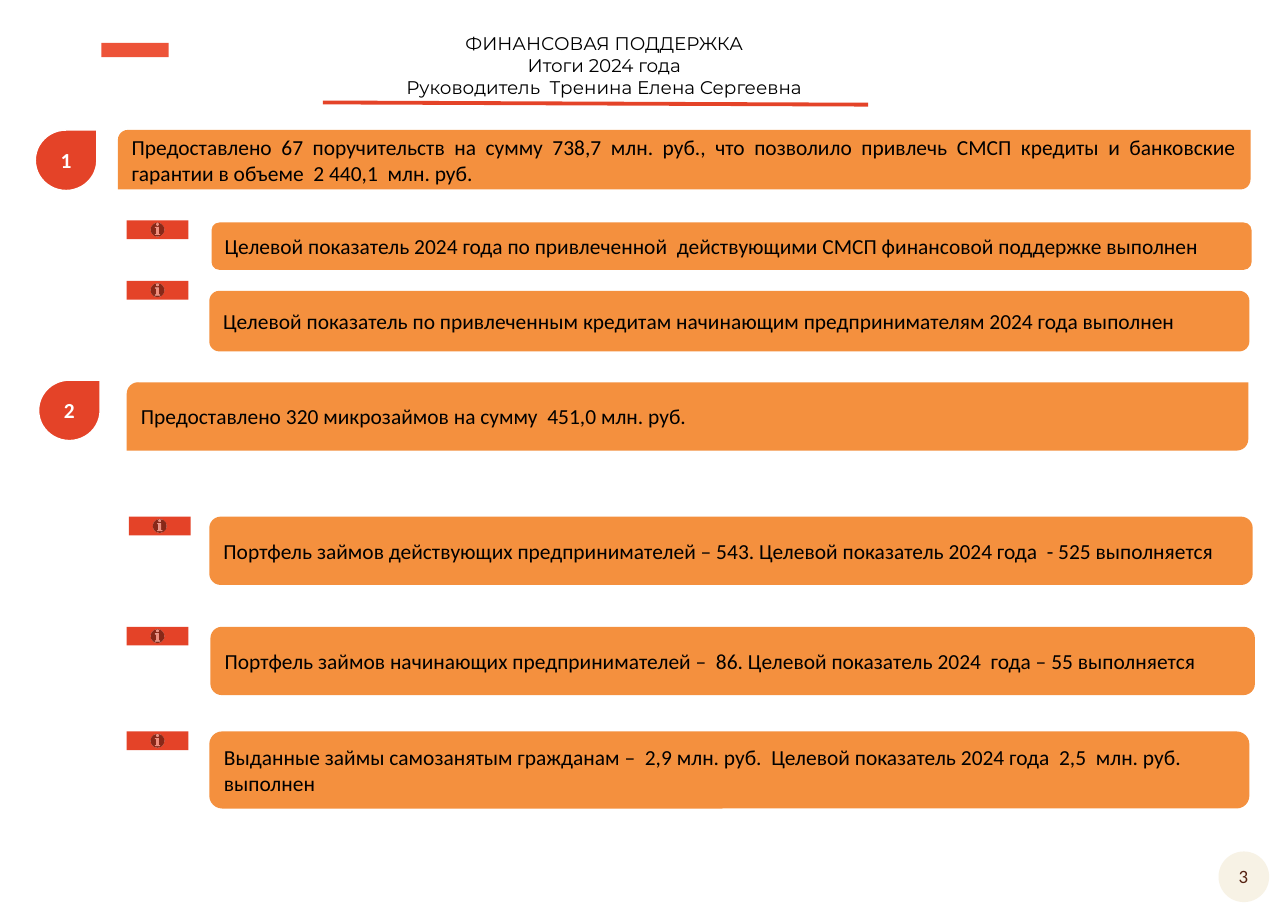
from lxml import etree
from pptx import Presentation
from pptx.dml.color import RGBColor
from pptx.enum.shapes import MSO_CONNECTOR, MSO_SHAPE
from pptx.enum.text import MSO_ANCHOR, PP_ALIGN
from pptx.oxml.ns import qn
from pptx.util import Inches, Pt

LEFT, CENTER, JUSTIFY = PP_ALIGN.LEFT, PP_ALIGN.CENTER, PP_ALIGN.JUSTIFY
MIDDLE = MSO_ANCHOR.MIDDLE
STRAIGHT = MSO_CONNECTOR.STRAIGHT
RECT, OVAL, DROP = MSO_SHAPE.RECTANGLE, MSO_SHAPE.OVAL, MSO_SHAPE.TEAR
ROUNDED, DIAGONAL = MSO_SHAPE.ROUNDED_RECTANGLE, MSO_SHAPE.ROUND_2_DIAG_RECTANGLE
INFO = MSO_SHAPE.ACTION_BUTTON_INFORMATION

ORANGE = RGBColor(0xF4, 0x90, 0x3E)
RED = RGBColor(0xE4, 0x43, 0x28)
CORAL = RGBColor(0xED, 0x53, 0x38)
CREAM = RGBColor(0xF7, 0xF2, 0xE5)
BROWN = RGBColor(0x56, 0x22, 0x12)
BLACK = RGBColor(0, 0, 0)
WHITE = RGBColor(0xFF, 0xFF, 0xFF)

# Content
TITLE = [
    "ФИНАНСОВАЯ ПОДДЕРЖКА",
    "Итоги 2024 года",
    "Руководитель  Тренина Елена Сергеевна",
]
PAGE_NUMBER = "3"

# Section: number, badge (left, top), bar (left, top, width, height), text
SECTIONS = [
    ("1", (0.32, 1.18), (1.07, 1.18, 10.28, 0.54),
     "Предоставлено 67 поручительств на сумму 738,7 млн. руб., что позволило "
     "привлечь СМСП кредиты и банковские гарантии в объеме  2 440,1  млн. руб."),
    ("2", (0.35, 3.45), (1.15, 3.47, 10.18, 0.62),
     "Предоставлено 320 микрозаймов на сумму  451,0 млн. руб."),
]

# Detail: info mark (left, top), bar (left, top, width, height), text
DETAILS = [
    ((1.15, 2.0), (1.92, 2.02, 9.44, 0.43),
     "Целевой показатель 2024 года по привлеченной  действующими СМСП "
     "финансовой поддержке выполнен"),
    ((1.15, 2.55), (1.9, 2.64, 9.44, 0.55),
     "Целевой показатель по привлеченным кредитам начинающим "
     "предпринимателям 2024 года выполнен"),
    ((1.17, 4.69), (1.9, 4.69, 9.47, 0.62),
     "Портфель займов действующих предпринимателей – 543. "
     "Целевой показатель 2024 года  - 525 выполняется"),
    ((1.15, 5.69), (1.91, 5.69, 9.48, 0.62),
     "Портфель займов начинающих предпринимателей –  86. "
     "Целевой показатель 2024  года – 55 выполняется"),
    ((1.15, 6.64), (1.9, 6.64, 9.44, 0.7),
     "Выданные займы самозанятым гражданам –  2,9 млн. руб.  "
     "Целевой показатель 2024 года  2,5  млн. руб. выполнен"),
]
BADGE_SIZE = (0.56, 0.55)
MARK_SIZE = (0.56, 0.17)

deck = Presentation()
deck.slide_width, deck.slide_height = Inches(11.69), Inches(8.27)
page = deck.slides.add_slide(deck.slide_layouts[6])


def add_shape(kind, area, fill):
    shape = page.shapes.add_shape(kind, *map(Inches, area))
    shape.shadow.inherit = False
    shape.fill.solid()
    shape.fill.fore_color.rgb = fill
    shape.line.fill.background()
    return shape


def write(box, text, align, size=14, font="Calibri", color=BLACK, bold=False):
    frame = box.text_frame
    frame.word_wrap = True
    frame.vertical_anchor = MIDDLE
    frame.text = text
    for para in frame.paragraphs:
        para.alignment = align
        for span in para.runs:
            span.font.size = Pt(size)
            span.font.name = font
            span.font.bold = bold
            span.font.color.rgb = color


def add_text(area, text, **style):
    box = page.shapes.add_textbox(*map(Inches, area))
    write(box, text, CENTER, **style)


# Page number and corner accent
add_shape(OVAL, (11.06, 7.73, 0.46, 0.46), CREAM)
add_text((11.03, 7.8, 0.51, 0.31), PAGE_NUMBER, size=12.3, color=BROWN)
add_shape(RECT, (0.92, 0.39, 0.61, 0.13), CORAL)

# Title and its underline
add_text((2.93, 0.27, 5.11, 0.65), "\n".join(TITLE), size=12, font="Montserrat")
underline = page.shapes.add_connector(
    STRAIGHT, *map(Inches, (2.93, 0.93, 7.88, 0.95)))
underline.line.color.rgb = RED
underline.line.width = Pt(2.5)
etree.SubElement(underline._element.spPr, qn("a:effectLst"))

# Numbered sections
for number, corner, area, text in SECTIONS:
    write(add_shape(DIAGONAL, area, ORANGE), text, JUSTIFY)
    badge = add_shape(DROP, corner + BADGE_SIZE, RED)
    badge.line.color.rgb = WHITE
    badge.line.width = Pt(1)
    write(badge, number, CENTER, color=WHITE, bold=True)
    frame = badge.text_frame
    frame.margin_left = frame.margin_right = 0
    frame.margin_top = frame.margin_bottom = 0

# Details with information marks
for corner, area, text in DETAILS:
    add_shape(INFO, corner + MARK_SIZE, RED)
    write(add_shape(ROUNDED, area, ORANGE), text, LEFT)

deck.save("out.pptx")
